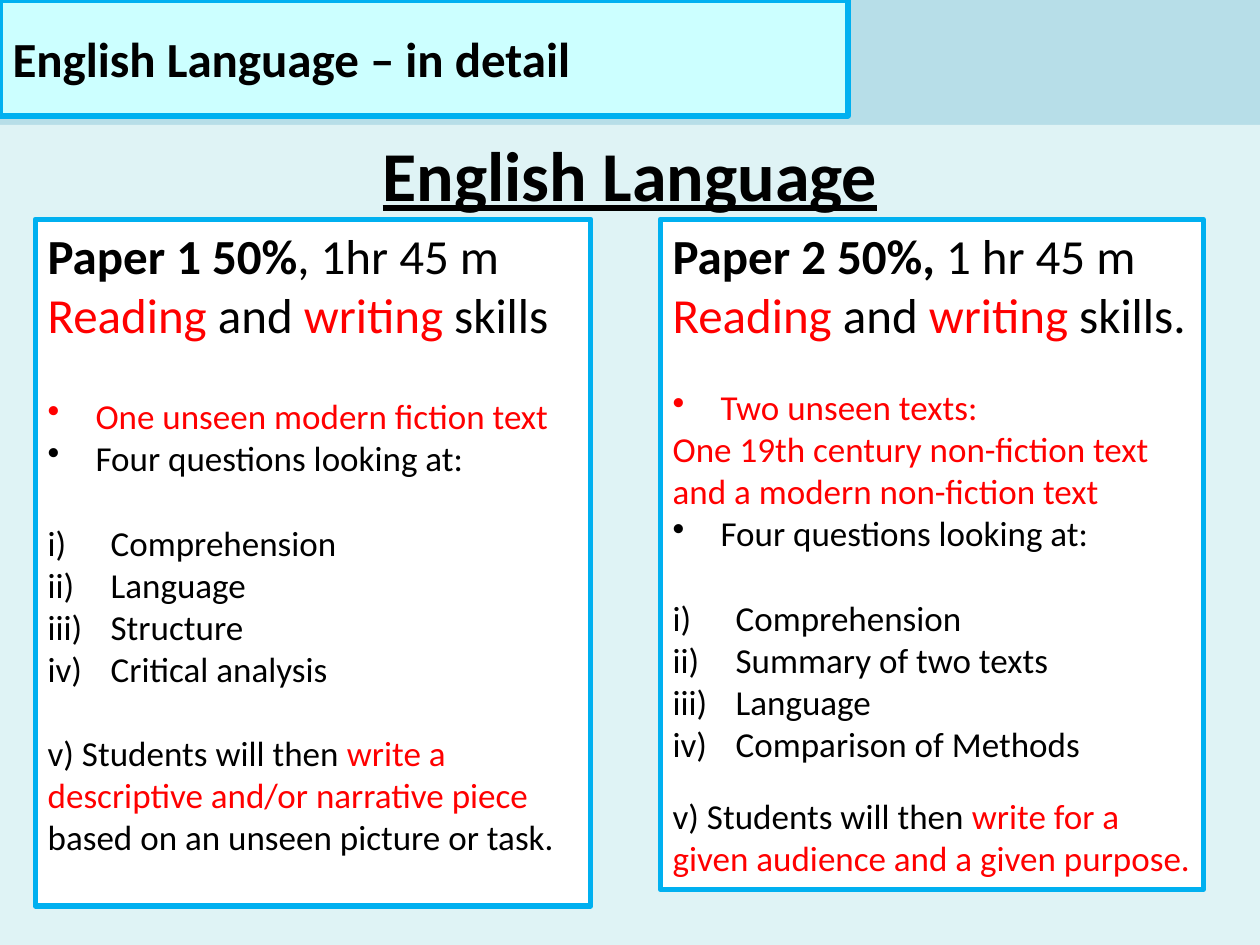
from dataclasses import dataclass
from pptx import Presentation
from pptx import util as u
from pptx.dml.color import RGBColor
from pptx.enum import shapes, text
from pptx.oxml.ns import qn
from lxml import etree


@dataclass(frozen=True)
class Theme:
    font: str = "Calibri"
    back: str = "B7DEE8"
    body: str = "DFF3F5"
    title: str = "CCFFFF"
    panel: str = "FFFFFF"
    border: str = "00B0F0"
    ink: str = "000000"
    red: str = "FF0000"
    heading: int = 40
    large: int = 28
    small: int = 20
    line_height: float = 1.22  # line pitch as a share of the type size
    indent: float = 0.38


T = Theme()
W, H = 10, 7.5

# Content: a run is (text, style); a paragraph is (kind, gap above in points of type, runs)
TITLE = "English Language – in detail"
HEADING = "English Language"
SKILLS = [("Reading", "red"), (" and ", ""), ("writing", "red")]
QUESTIONS = ("bullet", 0, [("Four questions looking at:", "")])


def numbered(*topics):
    numerals = ("i)", "ii)", "iii)", "iv)")
    return [("plain", 0 if i else T.small, [(f"{n}\t{topic}", "")])
            for i, (n, topic) in enumerate(zip(numerals, topics))]


PAPER_1 = [
    ("head", 0, [("Paper 1 50%", "bold"), (", 1hr 45 m ", ""), *SKILLS, (" skills", "")]),
    ("bullet", 24, [("One unseen modern fiction text", "red")]),
    QUESTIONS,
    *numbered("Comprehension", "Language", "Structure", "Critical analysis"),
    ("plain", 20, [("v) Students will then ", ""),
                   ("write a descriptive and/or narrative piece ", "red"),
                   ("based on an unseen picture or task.", "")]),
]
PAPER_2 = [
    ("head", 0, [("Paper 2 50%,", "bold"), (" 1 hr 45 m ", ""), *SKILLS, (" skills.", "")]),
    ("bullet", 20, [("Two unseen texts:", "red")]),
    ("plain", 0, [("One 19th century non-fiction text and a modern non-fiction text", "red")]),
    QUESTIONS,
    *numbered("Comprehension", "Summary of two texts", "Language", "Comparison of Methods"),
    ("plain", 14, [("v) Students will then ", ""),
                   ("write for a given audience and a given purpose.", "red")]),
]

# Layout: left, top, width, height in inches
BODY_TOP, PANEL_TOP = 0.99, 1.74
TITLE_BOX = (0, 0, 6.73, 0.92)
BODY_BOX = (0, BODY_TOP, W, H - BODY_TOP)
PANELS = [((0.28, PANEL_TOP, 4.41, 5.45), PAPER_1),
          ((5.24, PANEL_TOP, 4.31, 5.32), PAPER_2)]


def rgb(color):
    return RGBColor.from_string(color)


def dress(sp, box, fill, border=None):
    sp.left, sp.top, sp.width, sp.height = map(u.Inches, box)
    sp.fill.solid()
    sp.fill.fore_color.rgb = rgb(fill)
    if border:
        sp.line.color.rgb = rgb(border)
        sp.line.width = u.Pt(3)
    tf = sp.text_frame
    tf.word_wrap = True
    tf.auto_size = text.MSO_AUTO_SIZE.NONE
    return tf


def style(p, size, align=text.PP_ALIGN.LEFT, bold=False):
    p.alignment = align
    p.font.name, p.font.size, p.font.bold = T.font, u.Pt(size), bold
    p.font.color.rgb = rgb(T.ink)


def set_bullet(p, char=None):
    pPr = p._p.get_or_add_pPr()
    indent = u.Inches(T.indent) if char else 0
    pPr.set("marL", str(indent))
    pPr.set("indent", str(-indent))
    bu = etree.Element(qn("a:buChar" if char else "a:buNone"))
    if char:
        bu.set("char", char)
    pPr.insert_element_before(bu, "a:tabLst", "a:defRPr", "a:extLst")


def write_paper(tf, paragraphs):
    for i, (kind, gap, runs) in enumerate(paragraphs):
        p = tf.add_paragraph() if i else tf.paragraphs[0]
        style(p, T.large if kind == "head" else T.small)
        p.space_before = u.Pt(round(gap * T.line_height, 1))
        if kind == "bullet":
            set_bullet(p, "•")
        for words, look in runs:
            r = p.add_run()
            r.text = words
            if look == "bold":
                r.font.bold = True
            elif look == "red":
                r.font.color.rgb = rgb(T.red)


prs = Presentation()
prs.slide_width, prs.slide_height = u.Inches(W), u.Inches(H)
s = prs.slides.add_slide(prs.slide_layouts[1])
s.background.fill.solid()
s.background.fill.fore_color.rgb = rgb(T.back)

# Title banner
tf = dress(s.shapes.title, TITLE_BOX, T.title, T.border)
tf.text = TITLE
style(tf.paragraphs[0], T.large, bold=True)

# Body with the centred heading
tf = dress(s.placeholders[1], BODY_BOX, T.body)
tf.text = HEADING
p = tf.paragraphs[0]
style(p, T.heading, text.PP_ALIGN.CENTER, bold=True)
p.font.underline = True
set_bullet(p)

# One panel per paper
for box, paragraphs in PANELS:
    sp = s.shapes.add_shape(shapes.MSO_SHAPE.RECTANGLE, *map(u.Inches, box))
    sp.shadow.inherit = False
    tf = dress(sp, box, T.panel, T.border)
    tf.vertical_anchor = text.MSO_ANCHOR.TOP
    write_paper(tf, paragraphs)

prs.save("out.pptx")
